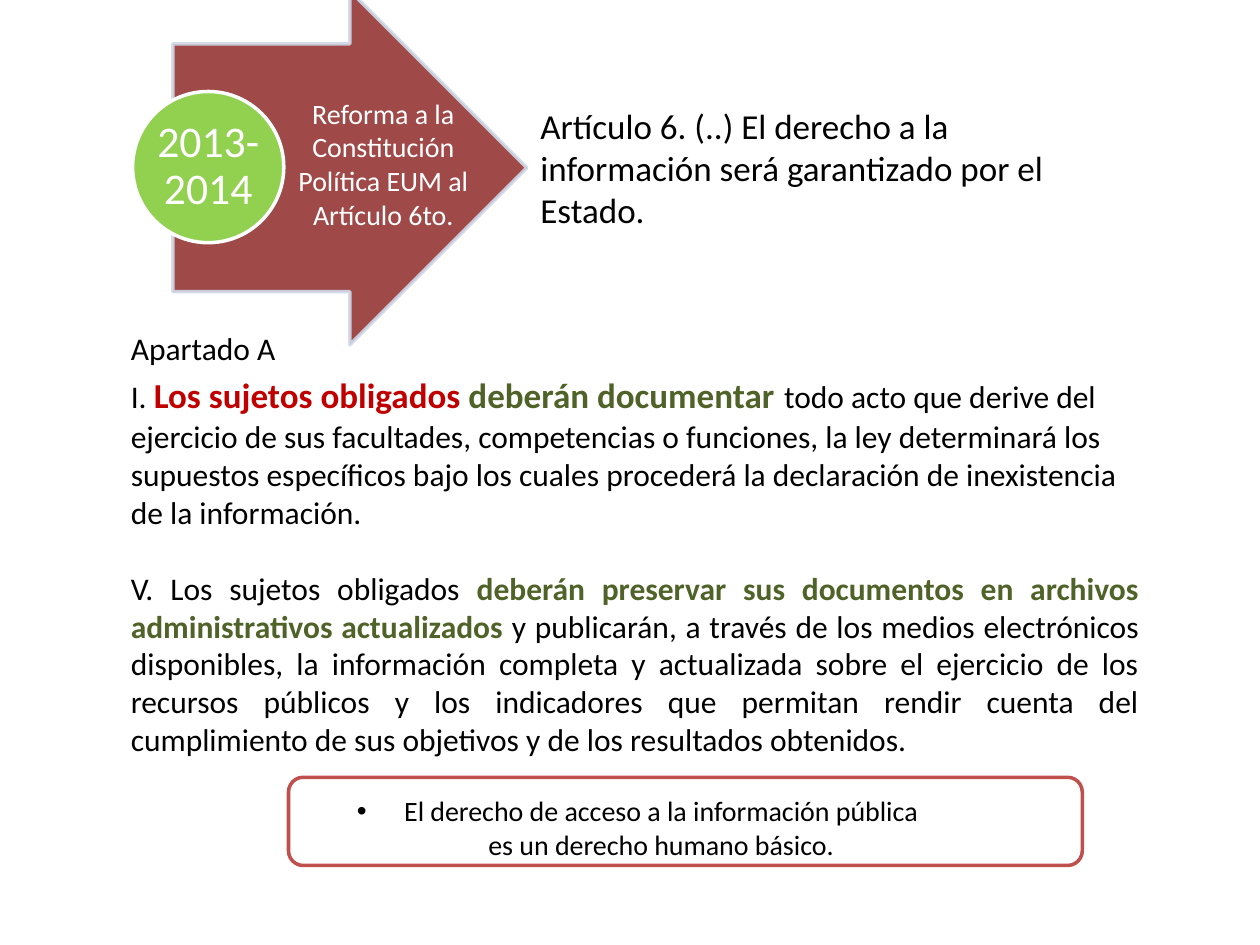
from dataclasses import dataclass

import pptx
import pptx.dml.color
import pptx.enum.shapes
import pptx.enum.text
import pptx.oxml.ns
import pptx.util

Pt = pptx.util.Pt
RGB = pptx.dml.color.RGBColor.from_string
MSO = pptx.enum.shapes.MSO_SHAPE
ALIGN = pptx.enum.text.PP_ALIGN
AUTO = pptx.enum.text.MSO_AUTO_SIZE


@dataclass(frozen=True)
class Theme:
    font: str = "Calibri"
    ink: str = "000000"
    paper: str = "FFFFFF"
    red: str = "C00000"
    olive: str = "4F6228"
    arrow: str = "953735"
    arrow_line: str = "D0D8E8"
    year: str = "92D050"
    callout: str = "C0504D"
    small: int = 16
    body: int = 18
    large: int = 20
    gap: int = 24
    year_size: int = 25
    line: int = 2


T = Theme()


def add_xml(parent, tag, **attrs):
    child = parent.makeelement(pptx.oxml.ns.qn(tag), attrs)
    parent.append(child)
    return child


def add_run(p, text, size, color=T.ink, bold=False):
    r = p.add_run()
    r.text = text
    r.font.name, r.font.size, r.font.bold = T.font, Pt(size), bold
    r.font.color.rgb = RGB(color)


def add_shape(shapes, kind, box, fill, line, opacity=None):
    sp = shapes.add_shape(kind, *map(Pt, box))
    sp.shadow.inherit = False
    sp.fill.solid()
    sp.fill.fore_color.rgb = RGB(fill)
    sp.line.color.rgb = RGB(line)
    sp.line.width = Pt(T.line)
    if opacity:
        for color in sp._element.spPr.iter(pptx.oxml.ns.qn("a:srgbClr")):
            add_xml(color, "a:alpha", val=str(opacity * 1000))
    return sp


def add_text(shapes, box, auto_size=AUTO.SHAPE_TO_FIT_TEXT):
    tf = shapes.add_textbox(*map(Pt, box)).text_frame
    tf.word_wrap = True
    tf.auto_size = auto_size
    return tf


def build_callout(s, x, y, w, h):
    sp = add_shape(s.shapes, MSO.ROUNDED_RECTANGLE, (x, y, w, h), T.paper, T.callout)
    body = s.placeholders[1]
    body._element.addprevious(sp._element)  # frame behind its text
    body.left, body.top, body.width, body.height = map(Pt, (x + 26.6, y + 5.8, 345.6, 18))
    tf = body.text_frame
    tf.auto_size = AUTO.NONE
    p = tf.paragraphs[0]
    p.alignment = ALIGN.CENTER
    pPr = p._p.get_or_add_pPr()
    pPr.set("marL", str(Pt(27)))
    pPr.set("indent", str(-Pt(27)))
    add_xml(pPr, "a:buFont", typeface="Arial")
    add_xml(pPr, "a:buChar", char="•")
    add_run(p, "El derecho de acceso a la información pública es un derecho humano básico.", T.small)


def build_reform(s, x, y, w, h):
    # Arrow with the year badge on its tail
    shapes = s.shapes.add_group_shape().shapes
    arrow = add_shape(shapes, MSO.RIGHT_ARROW, (x, y, w, h), T.arrow, T.arrow_line, 90)
    arrow.adjustments[0] = 0.7
    add_shape(shapes, MSO.OVAL, (x - 23, y + 57.6, 86.4, 86.4), T.year, T.paper)
    # Year text, with side room so that it breaks only after the hyphen
    tf = add_text(shapes, (x - 12.4, y + 70.2, 65.2, 61.2), AUTO.NONE)
    tf.margin_left = tf.margin_right = 0
    tf.margin_top = tf.margin_bottom = Pt(1.5)
    tf.vertical_anchor = pptx.enum.text.MSO_ANCHOR.MIDDLE
    p = tf.paragraphs[0]
    p.alignment, p.line_spacing = ALIGN.CENTER, 0.9
    add_run(p, "2013-2014", T.year_size, T.paper)

    # Label inside the arrow
    p = add_text(s.shapes, (x + 64.1, y + 56.8, 112.3, 85)).paragraphs[0]
    p.alignment = ALIGN.CENTER
    add_run(p, "Reforma a la Constitución Política EUM al Artículo 6to.", T.small, T.paper)


def build_article(s, *box):
    p = add_text(s.shapes, box).paragraphs[0]
    add_run(p, "Artículo 6. (..) El derecho a la información será garantizado por el Estado.",
            T.large)


def build_sections(s, *box):
    tf = add_text(s.shapes, box)
    add_run(tf.paragraphs[0], "Apartado A", T.body)

    p = tf.add_paragraph()
    add_run(p, "I. ", T.body)
    add_run(p, "Los sujetos obligados ", T.large, T.red, True)
    add_run(p, "deberán documentar", T.large, T.olive, True)
    add_run(p, " ", T.gap, T.olive, True)
    add_run(p, "todo acto que derive del ejercicio de sus facultades, competencias o "
               "funciones, la ley determinará los supuestos específicos bajo los cuales "
               "procederá la declaración de inexistencia de la información.", T.body)

    p = tf.add_paragraph()
    p.alignment = ALIGN.JUSTIFY
    p.space_before = Pt(22)
    add_run(p, "V. Los sujetos obligados ", T.body)
    add_run(p, "deberán preservar sus documentos en archivos administrativos actualizados",
            T.body, T.olive, True)
    add_run(p, " y publicarán, a través de los medios electrónicos disponibles, la "
               "información completa y actualizada sobre el ejercicio de los recursos "
               "públicos y los indicadores que permitan rendir cuenta del cumplimiento de "
               "sus objetivos y de los resultados obtenidos. ", T.body)


def main():
    prs = pptx.Presentation()
    prs.slide_width, prs.slide_height = Pt(720), Pt(540)
    s = prs.slides.add_slide(prs.slide_layouts[1])
    title = s.shapes.title._element
    title.getparent().remove(title)
    build_callout(s, 164.9, 444.2, 453.6, 50.4)
    build_reform(s, 98.8, -5.3, 202.3, 202.3)
    build_article(s, 301.7, 56.2, 339, 80)
    build_sections(s, 67.7, 184.3, 590.4, 254)
    prs.save("out.pptx")


if __name__ == "__main__":
    main()
